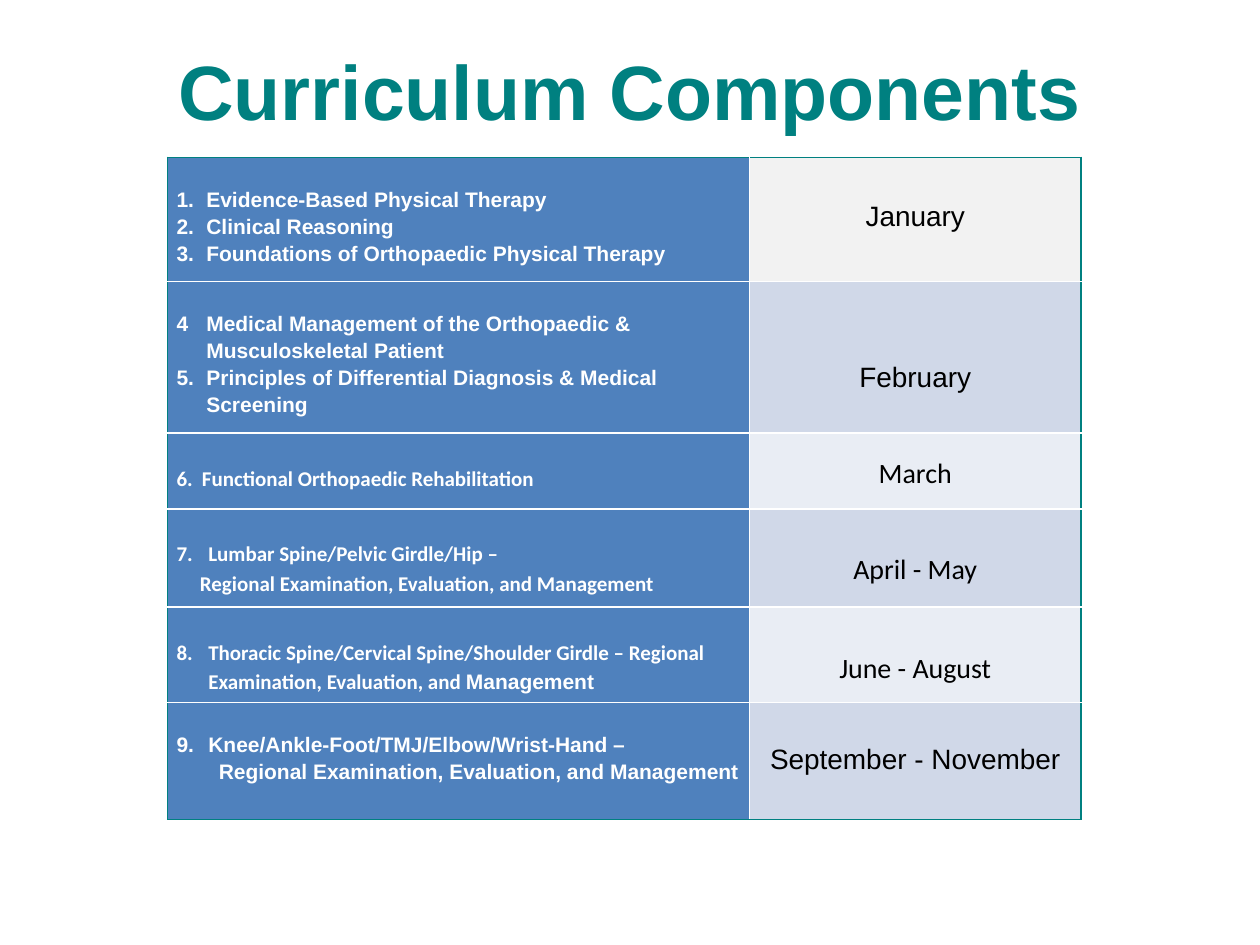
"""Build the Curriculum Components slide with its month-by-month table."""
from lxml import etree
from pptx import Presentation
from pptx import util as u
from pptx.dml import color
from pptx.enum import text
from pptx.oxml import ns

ARIAL, CALIBRI = "Arial", "Calibri"
THEME = {
    "teal": "008080", "blue": "4F81BD", "white": "FFFFFF", "black": "000000",
    "title": 44, "topic": 12, "month": 16, "lines": 1.15, "edge": 1,
}
TITLE = "Curriculum Components"
TOP, MID = text.MSO_ANCHOR.TOP, text.MSO_ANCHOR.MIDDLE
LEFT, MIDDLE = text.PP_ALIGN.LEFT, text.PP_ALIGN.CENTER

# height, topic font, pad, (number, indent, runs), month, month font, pad, anchor, fill
ROWS = [
    (2.5, ARIAL, 0.56, [
        (1, 0.6, ["Evidence-Based Physical Therapy"]),
        (2, 0.6, ["Clinical Reasoning"]),
        (3, 0.6, ["Foundations of Orthopaedic Physical Therapy"]),
    ], "January", ARIAL, 0.79, TOP, "F2F2F2"),
    (3.06, ARIAL, 0.56, [
        (4, 0.6, ["Medical Management of the Orthopaedic &\vMusculoskeletal Patient"]),
        (5, 0.6, ["Principles of Differential Diagnosis & Medical\vScreening"]),
    ], "February", ARIAL, 0.75, MID, "D0D8E8"),
    (1.53, CALIBRI, 0.59, [
        (6, 0.51, ["Functional Orthopaedic Rehabilitation"]),
    ], "March", CALIBRI, 0, MID, "E9EDF4"),
    (1.98, CALIBRI, 0.59, [
        (7, 0.64, ["Lumbar Spine/Pelvic Girdle/Hip –"]),
        (None, 0.47, ["Regional Examination, Evaluation, and Management"]),
    ], "April - May", CALIBRI, 0.79, TOP, "D0D8E8"),
    (1.92, CALIBRI, 0.59, [
        (8, 0.64, ["Thoracic Spine/Cervical Spine/Shoulder Girdle – Regional "
                   "Examination, Evaluation, and ", "Management"]),
    ], "June - August", CALIBRI, 0.79, TOP, "E9EDF4"),
    (2.36, ARIAL, 0.56, [
        (9, 0.64, ["Knee/Ankle-Foot/TMJ/Elbow/Wrist-Hand –"]),
        (None, 0.85, ["Regional Examination, Evaluation, and Management"]),
    ], "September - November", ARIAL, 0.75, TOP, "D0D8E8"),
]
WIDTHS = [11.73, 6.68]
PLAIN = {4}


def style(run, font, size, hue, bold):
    run.font.name, run.font.size, run.font.bold = font, u.Pt(size), bold
    run.font.color.rgb = color.RGBColor.from_string(hue)


def number(para, num, indent):
    props = para._p.get_or_add_pPr()
    props.set("marL", str(u.Cm(indent)))
    if num:
        props.set("indent", str(-u.Cm(indent)))
        kind = "arabicPlain" if num in PLAIN else "arabicPeriod"
        etree.SubElement(props, ns.qn("a:buAutoNum"), type=kind, startAt=str(num))


def border(cell, hues):
    props = cell._tc.get_or_add_tcPr()
    for spot, (side, hue) in enumerate(zip("LRTB", hues)):
        line = etree.Element(ns.qn("a:ln" + side), w=str(u.Pt(THEME["edge"])))
        fill = etree.SubElement(line, ns.qn("a:solidFill"))
        etree.SubElement(fill, ns.qn("a:srgbClr"), val=hue)
        props.insert(spot, line)


def fill_cell(cell, items, font, size, hue, bold, align, pad, anchor, back):
    cell.fill.solid()
    cell.fill.fore_color.rgb = color.RGBColor.from_string(back)
    cell.margin_left = cell.margin_right = u.Cm(0.18)
    cell.margin_top, cell.margin_bottom = u.Cm(pad), 0
    cell.vertical_anchor = anchor
    frame = cell.text_frame
    frame.text = "\n".join(runs[0] for _, _, runs in items)
    for para, (num, indent, runs) in zip(frame.paragraphs, items):
        para.alignment, para.line_spacing = align, THEME["lines"]
        number(para, num, indent)
        for run in para.runs:
            style(run, font, size, hue, bold)
        for more in runs[1:]:
            run = para.add_run()
            run.text = more
            style(run, ARIAL, size, hue, bold)


def add_title(slide):
    box = slide.shapes.add_textbox(u.Cm(1.27), u.Cm(0.43), u.Cm(22.86), u.Cm(2.74))
    frame = box.text_frame
    frame.word_wrap, frame.vertical_anchor = True, MID
    frame.text = TITLE
    para = frame.paragraphs[0]
    para.alignment = MIDDLE
    style(para.runs[0], ARIAL, THEME["title"], THEME["teal"], True)


def add_plan(slide):
    high = sum(row[0] for row in ROWS)
    table = slide.shapes.add_table(len(ROWS), len(WIDTHS), u.Cm(3.38), u.Cm(3.17),
                                   u.Cm(sum(WIDTHS)), u.Cm(high)).table
    table.first_row = table.horz_banding = False
    for col, wide in zip(table.columns, WIDTHS):
        col.width = u.Cm(wide)
    teal, white = THEME["teal"], THEME["white"]
    for i, (tall, font, pad, items, month, face, drop, anchor, back) in enumerate(ROWS):
        table.rows[i].height = u.Cm(tall)
        topic, date = table.cell(i, 0), table.cell(i, 1)
        fill_cell(topic, items, font, THEME["topic"], white, True,
                  LEFT, pad, TOP, THEME["blue"])
        fill_cell(date, [(None, 0, [month])], face, THEME["month"], THEME["black"],
                  False, MIDDLE, drop, anchor, back)
        top = teal if i == 0 else white
        base = teal if i == len(ROWS) - 1 else white
        border(topic, (teal, white, top, base))
        border(date, (white, teal, top, base))


def main():
    deck = Presentation()
    deck.slide_width, deck.slide_height = u.Cm(25.4), u.Cm(19.05)
    slide = deck.slides.add_slide(deck.slide_layouts[6])
    add_title(slide)
    add_plan(slide)
    deck.save("out.pptx")


if __name__ == "__main__":
    main()
